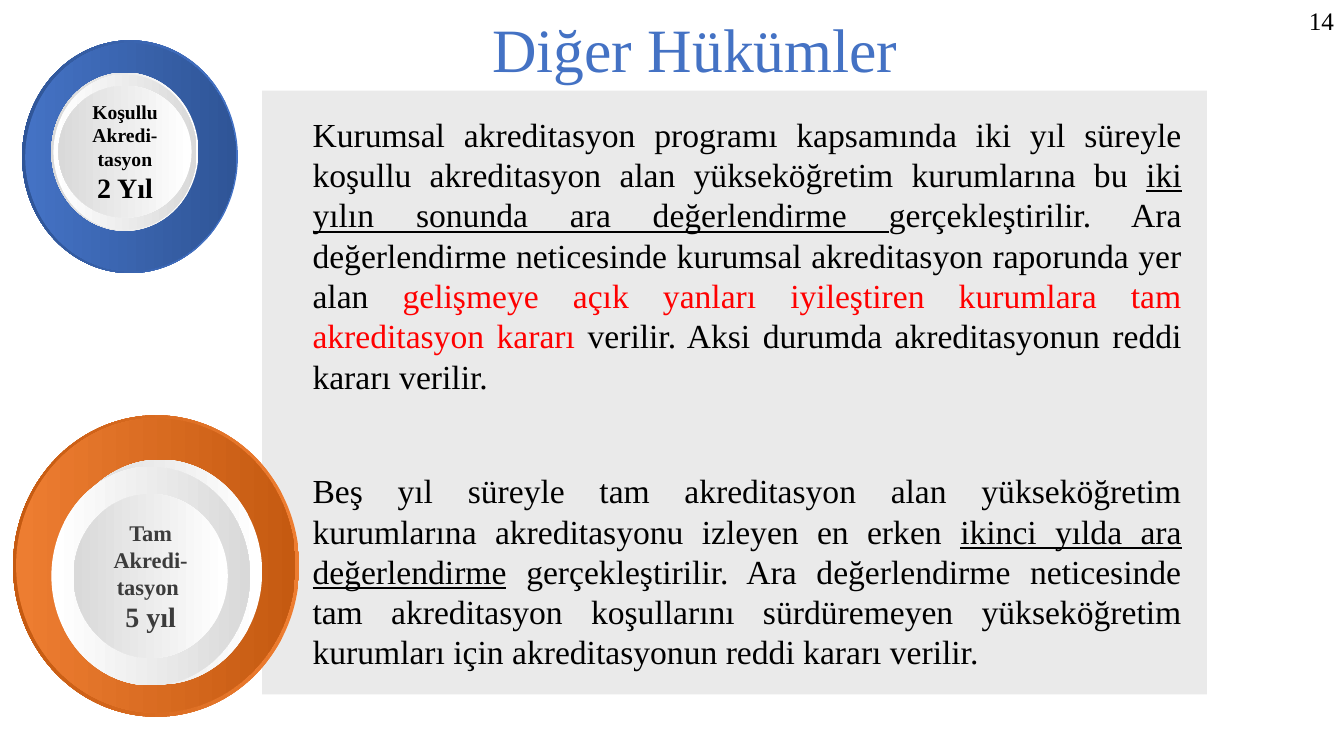
from lxml import etree
from pptx import Presentation
from pptx.dml.color import RGBColor
from pptx.enum.shapes import MSO_SHAPE
from pptx.enum.text import MSO_ANCHOR, PP_ALIGN
from pptx.oxml.ns import qn
from pptx.util import Inches, Pt

OVAL, RECTANGLE = MSO_SHAPE.OVAL, MSO_SHAPE.RECTANGLE
MIDDLE = MSO_ANCHOR.MIDDLE
CENTER, RIGHT, JUSTIFY = PP_ALIGN.CENTER, PP_ALIGN.RIGHT, PP_ALIGN.JUSTIFY
FONT = "Times New Roman"
COLORS = {
    "title": "4472C4", "text": "000000", "accent": "FF0000", "panel": "1A1A1A",
    "blue": "4472C4", "blue_dark": "2F5597",
    "orange": "ED7D31", "orange_dark": "C55A11",
    "white": "FFFFFF", "gray": "D9D9D9", "label": "3C3C3C",
}


def color(name):
    return RGBColor.from_string(COLORS[name])


def style(paragraph, size, color_name, alignment, bold=False):
    paragraph.alignment = alignment
    font = paragraph.font
    font.name, font.size, font.bold = FONT, Pt(size), bold
    font.color.rgb = color(color_name)


presentation = Presentation()
presentation.slide_width = Inches(13.33)
presentation.slide_height = Inches(7.5)
slide = presentation.slides.add_slide(presentation.slide_layouts[6])

# Title
title = slide.shapes.add_textbox(Inches(1.97), Inches(0.06), Inches(9.85), Inches(0.84))
title.text_frame.word_wrap = True
title.text_frame.text = "Diğer Hükümler"
style(title.text_frame.paragraphs[0], 44, "title", CENTER)

# Translucent panel with the provisions
panel = slide.shapes.add_shape(RECTANGLE, Inches(2.6), Inches(0.9), Inches(9.37), Inches(5.99))
panel.shadow.inherit = False
panel.line.fill.background()
panel.fill.solid()
panel.fill.fore_color.rgb = color("panel")
panel_color = panel.fill._xPr.find(qn("a:solidFill"))[0]
etree.SubElement(panel_color, qn("a:alpha"), val="9000")

frame = panel.text_frame
frame.word_wrap = True
frame.vertical_anchor = MIDDLE
frame.margin_left, frame.margin_right = Inches(0.5), Inches(0.25)
frame.margin_top = frame.margin_bottom = Inches(0.2)

provisions = [
    [("Kurumsal akreditasyon programı kapsamında iki yıl süreyle koşullu akreditasyon "
      "alan yükseköğretim kurumlarına bu ", None),
     ("iki yılın sonunda ara değerlendirme ", "underline"),
     ("gerçekleştirilir. Ara değerlendirme neticesinde kurumsal akreditasyon raporunda "
      "yer alan ", None),
     ("gelişmeye açık yanları iyileştiren kurumlara tam akreditasyon kararı ", "accent"),
     ("verilir. Aksi durumda akreditasyonun reddi kararı verilir.", None)],
    [("Beş yıl süreyle tam akreditasyon alan yükseköğretim kurumlarına akreditasyonu "
      "izleyen en erken ", None),
     ("ikinci yılda ara değerlendirme", "underline"),
     (" gerçekleştirilir. Ara değerlendirme neticesinde tam akreditasyon koşullarını "
      "sürdüremeyen yükseköğretim kurumları için akreditasyonun reddi kararı verilir.", None)],
]
for index, pieces in enumerate(provisions):
    paragraph = frame.add_paragraph() if index else frame.paragraphs[0]
    style(paragraph, 24, "text", JUSTIFY)
    if index:
        paragraph.space_before = Pt(53)
    for text, emphasis in pieces:
        run = paragraph.add_run()
        run.text = text
        if emphasis == "underline":
            run.font.underline = True
        elif emphasis == "accent":
            run.font.color.rgb = color("accent")

# Page number
page_number = slide.shapes.add_textbox(Inches(10.33), 0, Inches(3), Inches(0.4))
page_number.text_frame.word_wrap = True
page_number.text_frame.text = "14"
style(page_number.text_frame.paragraphs[0], 18, "text", RIGHT)

# Badges: two coloured rings, two pale rings and a labelled centre, back to front
ring_angles = [180, 0, 180, 0, 180]
badges = [
    ("blue", "blue_dark", "text", [("Koşullu Akredi-tasyon", 14), ("2 Yıl", 20)],
     [(0.22, 0.4, 2.14, 2.31), (0.25, 0.43, 2.09, 2.26), (0.51, 0.72, 1.46, 1.57),
      (0.53, 0.74, 1.42, 1.54), (0.58, 0.85, 1.32, 1.31)]),
    ("orange", "orange_dark", "label", [("Tam Akredi-tasyon ", 16), ("5 yıl", 20)],
     [(0.13, 4.12, 2.84, 2.99), (0.16, 4.15, 2.77, 2.92), (0.58, 4.56, 2.02, 2.23),
      (0.51, 4.63, 1.97, 2.17), (0.73, 4.9, 1.53, 1.63)]),
]
for light, dark, label_color, labels, ovals in badges:
    ring_colors = [(light, dark)] * 2 + [("white", "gray")] * 3
    for oval, angle, stop_colors in zip(ovals, ring_angles, ring_colors):
        ring = slide.shapes.add_shape(OVAL, *[Inches(value) for value in oval])
        ring.shadow.inherit = False
        ring.line.fill.background()
        ring.fill.gradient()
        ring.fill.gradient_angle = angle
        for stop, position, name in zip(ring.fill.gradient_stops, (0.01, 1), stop_colors):
            stop.position = position
            stop.color.rgb = color(name)

    # The last ring is the centre that carries the label
    frame = ring.text_frame
    frame.word_wrap = True
    frame.vertical_anchor = MIDDLE
    for index, (text, size) in enumerate(labels):
        paragraph = frame.add_paragraph() if index else frame.paragraphs[0]
        paragraph.text = text
        style(paragraph, size, label_color, CENTER, bold=True)

presentation.save("out.pptx")
